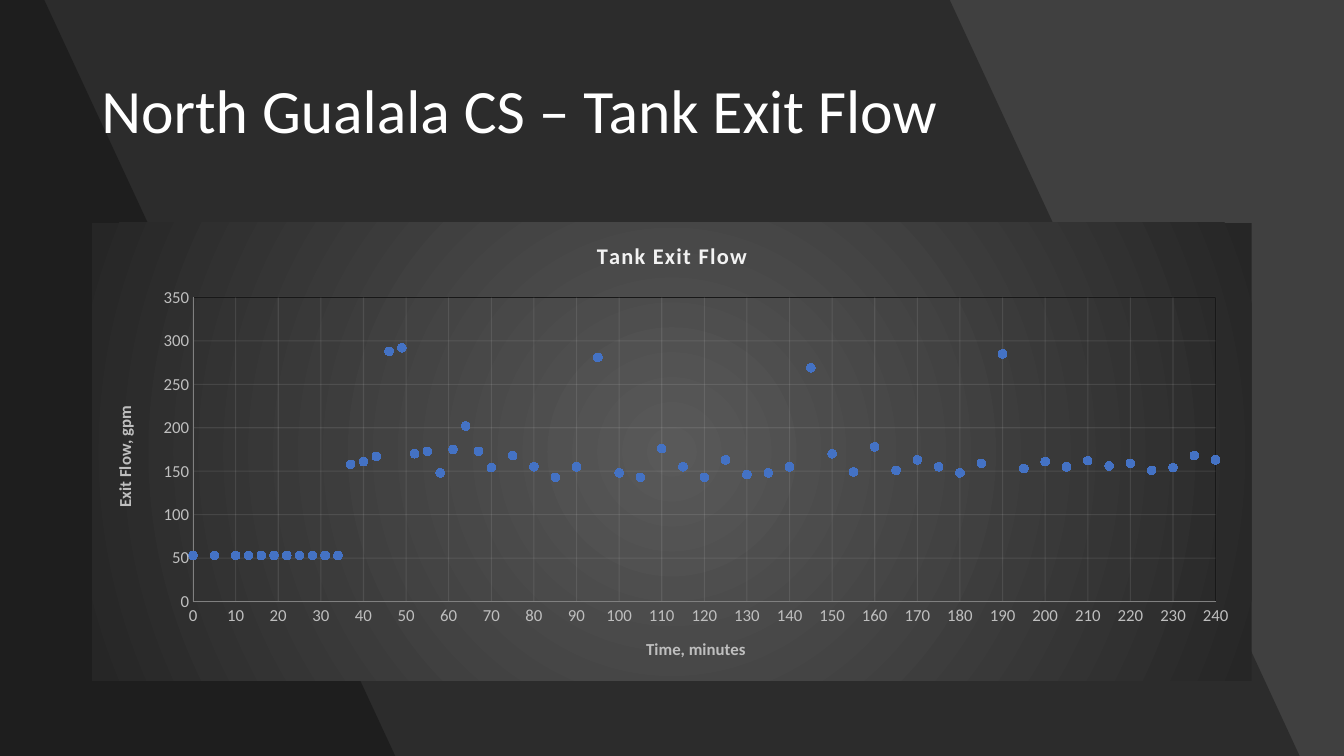
from dataclasses import dataclass
from typing import Optional

from pptx import Presentation
from pptx.chart.axis import ValueAxis
from pptx.chart.chart import Chart
from pptx.chart.data import XyChartData
from pptx.dml.color import RGBColor
from pptx.enum.chart import XL_CHART_TYPE, XL_MARKER_STYLE, XL_TICK_MARK
from pptx.enum.text import MSO_ANCHOR, PP_ALIGN
from pptx.oxml import parse_xml
from pptx.oxml.ns import nsdecls, qn
from pptx.oxml.xmlchemy import BaseOxmlElement
from pptx.slide import Slide
from pptx.text.text import Font, TextFrame
from pptx.util import Emu, Inches, Pt


@dataclass(frozen=True)
class Theme:
    font: str = "Calibri"
    background: str = "404040"
    shade: str = "000000"
    title: str = "FFFFFF"
    chart_title: str = "F2F2F2"
    labels: str = "BFBFBF"
    axis_line: str = "808080"
    grid_line: str = "F2F2F2"
    plot_border: str = "000000"
    chart_center: str = "595959"
    chart_edge: str = "262626"
    marker: str = "4472C4"
    title_size: int = 44
    chart_title_size: int = 16
    label_size: int = 12
    line_width: float = 0.75


@dataclass(frozen=True)
class Area:
    column: float
    row: float
    columns: float
    rows: float


@dataclass(frozen=True)
class Band:
    top_column: float
    bottom_column: float


@dataclass(frozen=True)
class AxisSpec:
    title: str
    maximum: Optional[int] = None
    step: Optional[int] = None


THEME = Theme()
WIDTH, HEIGHT = Inches(13.33), Inches(7.5)
COLUMN, ROW = WIDTH / 100, HEIGHT / 100
TITLE_AREA = Area(6.8, 5.33, 86.35, 19.33)
CHART_AREA = Area(6.86, 29.47, 86.27, 60.6)
PLOT_SHARES = {"x": 0.087, "y": 0.163, "w": 0.882, "h": 0.664}
BANDS = [Band(70.67, 96.7), Band(3.3, 29.41)]
TIME_AXIS = AxisSpec("Time, minutes", 240, 10)
FLOW_AXIS = AxisSpec("Exit Flow, gpm")
MINUTES = [0, 5, *range(10, 71, 3), *range(75, 241, 5)]
FLOWS = [53] * 11 + [
    158, 161, 167, 288, 292, 170, 173, 148, 175, 202, 173, 154,
    168, 155, 143, 155, 281, 148, 143, 176, 155, 143, 163, 146, 148, 155,
    269, 170, 149, 178, 151, 163, 155, 148, 159, 285, 153, 161, 155, 162,
    156, 159, 151, 154, 168, 163,
]


def place(area: Area) -> tuple[Emu, Emu, Emu, Emu]:
    return (Emu(int(area.column * COLUMN)), Emu(int(area.row * ROW)),
            Emu(int(area.columns * COLUMN)), Emu(int(area.rows * ROW)))


def style_font(font: Font, size: int, color: str, bold: bool = False) -> None:
    font.name = THEME.font
    font.size = Pt(size)
    font.bold = bold
    font.color.rgb = RGBColor.from_string(color)


def set_opacity(element: BaseOxmlElement, percent: int) -> None:
    for color in element.iter(qn("a:srgbClr")):
        color.append(parse_xml(f'<a:alpha {nsdecls("a")} val="{percent * 1000}"/>'))


def add_band(page: Slide, band: Band) -> None:
    builder = page.shapes.build_freeform(0, 0, scale=1.0)
    builder.add_line_segments([
        (int(band.top_column * COLUMN), 0),
        (int(band.bottom_column * COLUMN), HEIGHT),
        (0, HEIGHT),
    ])
    shape = builder.convert_to_shape()
    shape.shadow.inherit = False
    shape.line.fill.background()
    shape.fill.solid()
    shape.fill.fore_color.rgb = RGBColor.from_string(THEME.shade)
    set_opacity(shape.element.spPr, 30)


def add_title(page: Slide, text: str) -> None:
    title = page.shapes.title
    title.left, title.top, title.width, title.height = place(TITLE_AREA)
    title.text_frame.text = text
    title.text_frame.vertical_anchor = MSO_ANCHOR.MIDDLE
    para = title.text_frame.paragraphs[0]
    para.alignment = PP_ALIGN.LEFT
    para.line_spacing = 0.9
    style_font(para.font, THEME.title_size, THEME.title)
    title.element.getparent().append(title.element)


def write_label(frame: TextFrame, text: str, size: int, color: str) -> None:
    frame.text = text
    style_font(frame.paragraphs[0].font, size, color, bold=True)


def style_axis(axis: ValueAxis, spec: AxisSpec) -> None:
    axis.maximum_scale = spec.maximum
    axis.major_unit = spec.step
    axis.major_tick_mark = axis.minor_tick_mark = XL_TICK_MARK.NONE
    axis.tick_labels.number_format = "0"
    axis.tick_labels.number_format_is_linked = False
    style_font(axis.tick_labels.font, THEME.label_size, THEME.labels)
    write_label(axis.axis_title.text_frame, spec.title, THEME.label_size, THEME.labels)
    axis.has_major_gridlines = True
    for line, color in ((axis.format.line, THEME.axis_line),
                        (axis.major_gridlines.format.line, THEME.grid_line)):
        line.color.rgb = RGBColor.from_string(color)
        line.width = Pt(THEME.line_width)


def style_areas(chart: Chart) -> None:
    for grid in chart.element.iter(qn("c:majorGridlines")):
        set_opacity(grid, 10)
    plot_area = chart.element.find(".//" + qn("c:plotArea"))
    for layout in plot_area.findall(qn("c:layout")):
        plot_area.remove(layout)
    modes = "".join(f'<c:{key}Mode val="edge"/>' for key in "xy")
    shares = "".join(f'<c:{key} val="{share}"/>' for key, share in PLOT_SHARES.items())
    plot_area.insert(0, parse_xml(
        f'<c:layout {nsdecls("c")}><c:manualLayout><c:layoutTarget val="inner"/>'
        f'{modes}{shares}</c:manualLayout></c:layout>'))
    plot_area.append(parse_xml(
        f'<c:spPr {nsdecls("c", "a")}><a:noFill/><a:ln w="9525"><a:solidFill>'
        f'<a:srgbClr val="{THEME.plot_border}"/></a:solidFill></a:ln></c:spPr>'))
    chart.element.find(qn("c:chart")).addnext(parse_xml(
        f'<c:spPr {nsdecls("c", "a")}><a:gradFill><a:gsLst>'
        f'<a:gs pos="0"><a:srgbClr val="{THEME.chart_center}"/></a:gs>'
        f'<a:gs pos="100000"><a:srgbClr val="{THEME.chart_edge}"/></a:gs></a:gsLst>'
        '<a:path path="circle"><a:fillToRect l="50000" t="50000" r="50000" b="50000"/>'
        '</a:path></a:gradFill><a:ln><a:noFill/></a:ln></c:spPr>'))


def add_flow_chart(page: Slide) -> None:
    chart_data = XyChartData(number_format="0")
    points = chart_data.add_series("Series 1")
    for minute, flow in zip(MINUTES, FLOWS):
        points.add_data_point(minute, flow)
    chart = page.shapes.add_chart(
        XL_CHART_TYPE.XY_SCATTER, *place(CHART_AREA), chart_data).chart
    style_font(chart.font, THEME.label_size, THEME.labels)
    chart.has_legend = False
    write_label(chart.chart_title.text_frame, "Tank Exit Flow",
                THEME.chart_title_size, THEME.chart_title)
    for properties in chart.chart_title.text_frame.paragraphs[0]._p.iter(qn("a:defRPr")):
        properties.set("spc", "100")
    style_axis(chart.category_axis, TIME_AXIS)
    style_axis(chart.value_axis, FLOW_AXIS)
    chart.plots[0].vary_by_categories = False
    series = chart.plots[0].series[0]
    series.smooth = False
    series.format.line.fill.background()
    series.marker.style = XL_MARKER_STYLE.CIRCLE
    series.marker.size = 6
    series.marker.format.fill.solid()
    series.marker.format.fill.fore_color.rgb = RGBColor.from_string(THEME.marker)
    series.marker.format.line.fill.background()
    style_areas(chart)


def main() -> None:
    deck = Presentation()
    deck.slide_width, deck.slide_height = WIDTH, HEIGHT
    page = deck.slides.add_slide(deck.slide_layouts.get_by_name("Title Only"))
    page.background.fill.solid()
    page.background.fill.fore_color.rgb = RGBColor.from_string(THEME.background)
    for band in BANDS:
        add_band(page, band)
    add_title(page, "North Gualala CS – Tank Exit Flow")
    add_flow_chart(page)
    deck.save("out.pptx")


if __name__ == "__main__":
    main()
